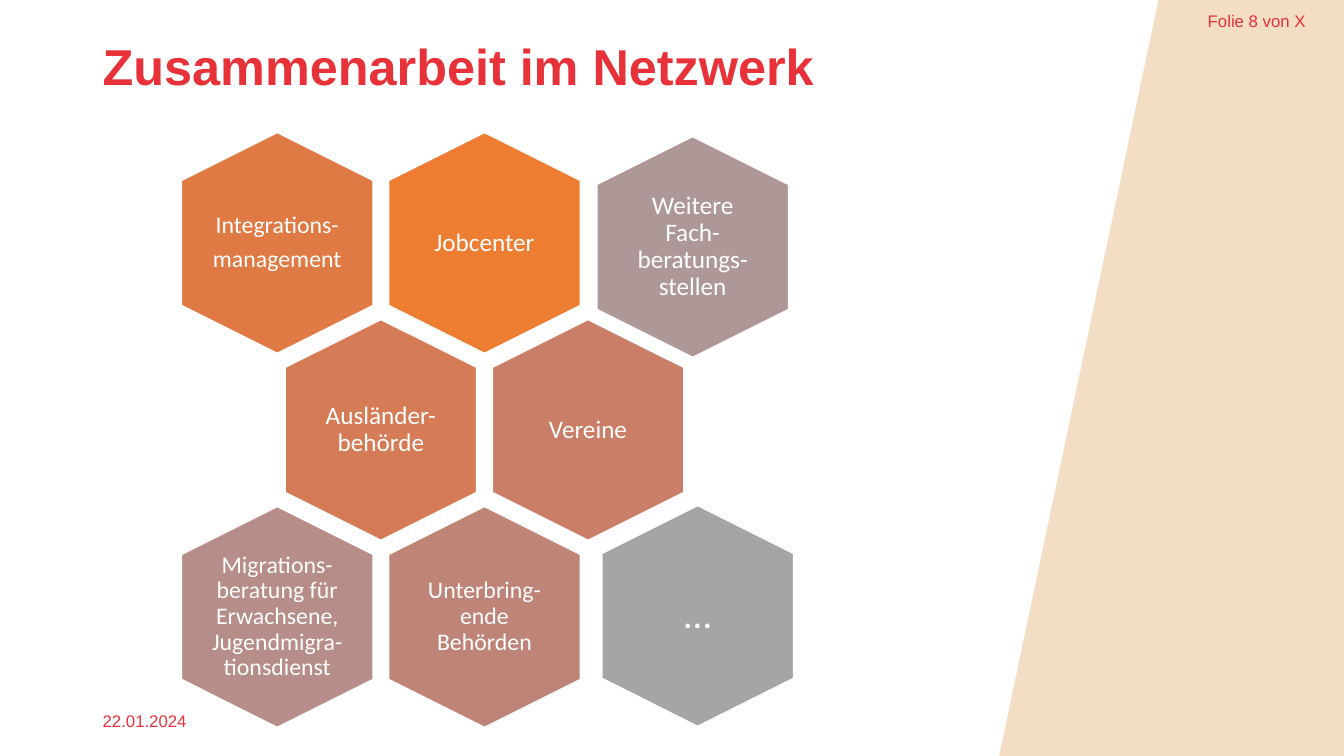
from pptx import Presentation
from pptx.dml.color import RGBColor
from pptx.enum import shapes, text
from pptx.util import Inches, Pt

RED = RGBColor(0xE7, 0x32, 0x39)
SAND = RGBColor(0xF3, 0xDD, 0xC5)
WHITE = RGBColor(0xFF, 0xFF, 0xFF)

HEX_LENGTH, HEX_WIDTH = 2.19, 1.9
LABEL_WIDTH, LABEL_HEIGHT = 1.31, 1.5
FIRST_X, FIRST_Y = 2.75, 2.41
PITCH_X, PITCH_Y = 2.055, 1.855

# column, row, x nudge, y nudge, fill, size, inset, paragraphs
PARTNERS = [
    (1, 0, 0, 0, "ED7D31", 18, 0.07, ["Jobcenter"]),
    (0, 0, 0, 0, "E07A44", 17, 0, ["Integrations-", "management"]),
    (0.5, 1, 0, 0, "D57B56", 18, 0.07, ["Ausländer-behörde"]),
    (1.5, 1, 0, 0, "CA7E67", 18, 0, ["Vereine"]),
    (1, 2, 0, 0, "BF8478", 17, 0.07, ["Unterbring-ende Behörden"]),
    (0, 2, 0, 0, "B68D88", 17, 0,
     ["Migrations-beratung für Erwachsene, Jugendmigra-tionsdienst"]),
    (2, 0, 0.01, 0.04, "AD9897", 18, 0.07, ["Weitere Fach-beratungs-stellen"]),
    (2, 2, 0.06, -0.01, "A5A5A5", 28, 0, ["…"]),
]


def add_text(s, box, lines, font, para=None, frame=None):
    """Add a wrapping text box with one formatted run per paragraph."""
    tf = s.shapes.add_textbox(*map(Inches, box)).text_frame
    tf.word_wrap = True
    for name, value in (frame or {}).items():
        setattr(tf, name, value)
    for i, line in enumerate(lines):
        p = tf.add_paragraph() if i else tf.paragraphs[0]
        for name, value in (para or {}).items():
            setattr(p, name, value)
        r = p.add_run()
        r.text = line
        r.font.color.rgb = font["color"]
        for name in font.keys() - {"color"}:
            setattr(r.font, name, font[name])


def add_side_panel(s):
    """Draw the slanted panel along the right edge."""
    corners = [(11.49, 0), (13.33, 0), (13.33, 7.5), (9.91, 7.5)]
    points = [(Inches(x), Inches(y)) for x, y in corners]
    fb = s.shapes.build_freeform(*points[0])
    fb.add_line_segments(points[1:], close=True)
    sp = fb.convert_to_shape()
    sp.shadow.inherit = False
    sp.fill.solid()
    sp.fill.fore_color.rgb = SAND
    sp.line.fill.background()


def add_partner(s, col, row, dx, dy, fill, size, inset, lines):
    """Draw an upright hexagon with its centred label."""
    x, y = FIRST_X + col * PITCH_X + dx, FIRST_Y + row * PITCH_Y + dy
    sp = s.shapes.add_shape(
        shapes.MSO_SHAPE.HEXAGON, Inches(x - HEX_LENGTH / 2),
        Inches(y - HEX_WIDTH / 2), Inches(HEX_LENGTH), Inches(HEX_WIDTH))
    sp.rotation = 90
    sp.adjustments[0] = 0.25
    sp.shadow.inherit = False
    sp.fill.solid()
    sp.fill.fore_color.rgb = RGBColor.from_string(fill)
    sp.line.color.rgb = WHITE
    sp.line.width = Pt(1)
    margins = ("margin_left", "margin_top", "margin_right", "margin_bottom")
    frame = dict.fromkeys(margins, Inches(inset))
    frame["vertical_anchor"] = text.MSO_ANCHOR.MIDDLE
    box = (x - LABEL_WIDTH / 2, y - LABEL_HEIGHT / 2, LABEL_WIDTH, LABEL_HEIGHT)
    add_text(s, box, lines,
             {"name": "Calibri", "size": Pt(size), "color": WHITE},
             {"alignment": text.PP_ALIGN.CENTER, "line_spacing": 0.9,
              "space_after": Pt(round(size * 0.35))}, frame)


def main():
    """Build the slide and save it."""
    prs = Presentation()
    prs.slide_width, prs.slide_height = Inches(13.33), Inches(7.5)
    s = prs.slides.add_slide(prs.slide_layouts[6])
    small = {"name": "Arial", "size": Pt(12), "color": RED}
    middle = {"vertical_anchor": text.MSO_ANCHOR.MIDDLE}
    add_side_panel(s)
    add_text(s, (11.88, 0.06, 1.45, 0.4), ["Folie 8 von X"], small)
    add_text(s, (0.92, 0.4, 11.5, 0.58), ["Zusammenarbeit im Netzwerk"],
             {**small, "size": Pt(36), "bold": True},
             {"line_spacing": 0.9}, middle)
    add_text(s, (0.92, 6.95, 3, 0.4), ["22.01.2024"], small, frame=middle)
    for partner in PARTNERS:
        add_partner(s, *partner)
    prs.save("out.pptx")


if __name__ == "__main__":
    main()
